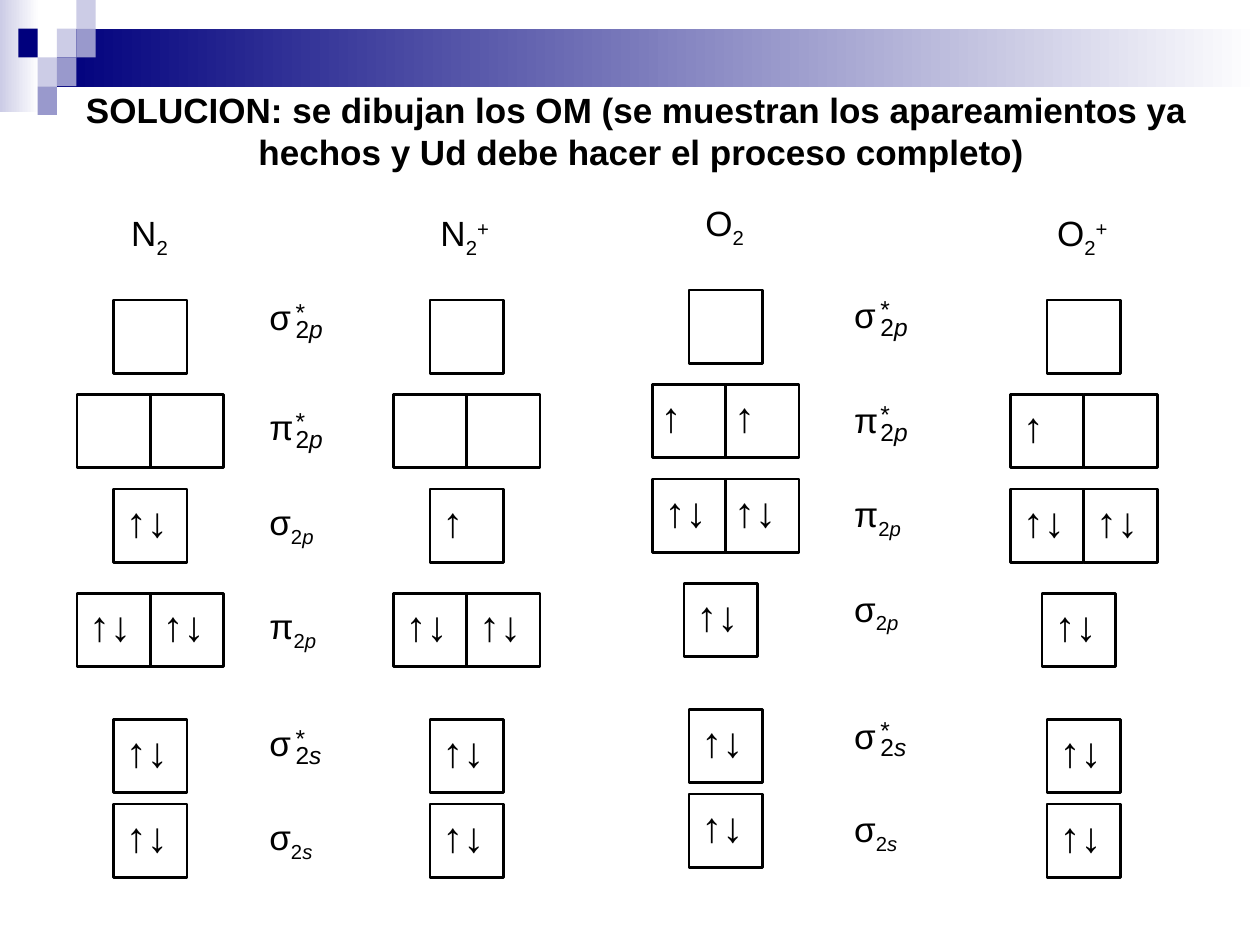
from pptx import Presentation
from pptx.dml.color import RGBColor
from pptx.enum.shapes import MSO_SHAPE
from pptx.enum.text import MSO_ANCHOR, MSO_AUTO_SIZE, PP_ALIGN
from pptx.util import Cm, Pt

RECTANGLE = MSO_SHAPE.RECTANGLE
TOP = MSO_ANCHOR.TOP
CENTER = PP_ALIGN.CENTER
FIXED = MSO_AUTO_SIZE.NONE
FIT_SHAPE = MSO_AUTO_SIZE.SHAPE_TO_FIT_TEXT

COLORS = {
    "ink": "000000",
    "navy": "00007D",
    "violet": "9999CC",
    "lilac": "CCCCE6",
    "white": "FFFFFF",
}
FONT = "Arial"
CELL = 1.48
ROW_TOPS = [1.91, 3.81, 5.72, 7.82, 10.36, 12.07]

SUBSCRIPT = {"baseline": "-25000"}
SUPERSCRIPT = {"baseline": "30000"}
ITALIC = {"i": "1"}
BOLD = {"b": "1"}
PAIR = [("↑", ITALIC), ("↓", BOLD)]
UP_BOLD = [("↑", BOLD)]
UP_ITALIC = [("↑", ITALIC)]
EMPTY = []


def color(name):
    return RGBColor.from_string(COLORS[name])


def style_paragraph(para, size, bold=False):
    para.font.name = FONT
    para.font.size = Pt(size)
    para.font.bold = bold
    para.font.color.rgb = color("ink")


def write_spans(para, spans, size):
    style_paragraph(para, size)
    for text, style in spans:
        span = para.add_run()
        span.text = text
        properties = span._r.get_or_add_rPr()
        for key, value in style.items():
            properties.set(key, value)


def add_text(shapes, left, top, width, height, spans, size):
    box = shapes.add_textbox(Cm(left), Cm(top), Cm(width), Cm(height))
    frame = box.text_frame
    frame.word_wrap = False
    frame.auto_size = FIT_SHAPE
    write_spans(frame.paragraphs[0], spans, size)


def add_block(shapes, left, top, width, height):
    block = shapes.add_shape(RECTANGLE, Cm(left), Cm(top), Cm(width), Cm(height))
    block.shadow.inherit = False
    return block


def add_banner(page, left, top):
    shapes = page.shapes.add_group_shape().shapes
    gradients = [(0, 0, 0.79, 2.26, "lilac"), (1.14, 0.58, 24.26, 1.17, "navy")]
    for x, y, width, height, start in gradients:
        band = add_block(shapes, left + x, top + y, width, height)
        band.line.fill.background()
        band.fill.gradient()
        band.fill.gradient_angle = 0
        for stop, name in zip(band.fill.gradient_stops, (start, "white")):
            stop.color.rgb = color(name)
    step = 0.58
    squares = [
        (3, 1, "lilac"), (4, 0, "lilac"), (4, 1, "violet"), (2, 2, "lilac"),
        (1, 1, "navy"), (3, 2, "violet"), (2, 3, "violet"),
    ]
    for column, row, name in squares:
        square = add_block(shapes, left + 0.39 * column - 0.02, top + step * row, 0.39, step)
        square.line.fill.background()
        square.fill.solid()
        square.fill.fore_color.rgb = color(name)


def add_title(page, left, top, width, height):
    title = page.shapes.title
    title.left, title.top, title.width, title.height = map(Cm, (left, top, width, height))
    frame = title.text_frame
    frame.text = (
        "SOLUCION: se dibujan los OM (se muestran los apareamientos ya \n"
        "hechos y Ud debe hacer el proceso completo)"
    )
    frame.word_wrap = False
    frame.auto_size = FIXED
    frame.vertical_anchor = TOP
    for para in frame.paragraphs:
        para.alignment = CENTER
        style_paragraph(para, 20, bold=True)


def add_orbitals(page, left, top, formula, formula_width, levels, indents, nudges):
    shapes = page.shapes.add_group_shape().shapes
    add_text(shapes, left + CELL - formula_width / 2, top, formula_width, 1.09, formula, 20)
    for row, (row_top, cells) in enumerate(zip(ROW_TOPS, levels)):
        indent = 0 if len(cells) == 2 else indents.get(row, CELL / 2)
        for column, electrons in enumerate(cells):
            cell_left = left + indent + column * CELL
            cell = add_block(shapes, cell_left, top + row_top, CELL, CELL)
            cell.fill.background()
            cell.line.color.rgb = color("ink")
            cell.line.width = Pt(1.5)
            if electrons:
                width = 1.35 if len(electrons) == 2 else 0.94
                text_left = cell_left + nudges.get((row, column), 0)
                add_text(shapes, text_left, top + row_top, width, 1.27, electrons, 24)


def add_stacked_label(shapes, left, top, symbol, subshell):
    add_text(shapes, left, top, 0.94, 1.09, [(symbol, {})], 20)
    box = shapes.add_textbox(Cm(left + 0.53), Cm(top + 0.35), Cm(1.47), Cm(1.35))
    frame = box.text_frame
    frame.word_wrap = False
    frame.margin_top = frame.margin_bottom = 0
    lines = [[("*", {})], [("2", {}), (subshell, ITALIC)]]
    for para, spans in zip((frame.paragraphs[0], frame.add_paragraph()), lines):
        para.line_spacing = 0.6
        write_spans(para, spans, 14)


def add_labels(page, left, top, labels):
    shapes = page.shapes.add_group_shape().shapes
    for offset, symbol, subshell, antibonding in labels:
        if antibonding:
            add_stacked_label(shapes, left, top + offset, symbol, subshell)
        else:
            spans = [(symbol, {}), ("2", SUBSCRIPT), (subshell, SUBSCRIPT | ITALIC)]
            add_text(shapes, left, top + offset, 1.45, 1.09, spans, 20)


def main():
    deck = Presentation()
    deck.slide_width, deck.slide_height = Cm(25.4), Cm(19.05)
    page = deck.slides.add_slide(deck.slide_layouts[5])
    add_banner(page, 0, 0)
    add_title(page, 0.99, 1.65, 23.88, 1.96)

    add_labels(page, 5.18, 5.84, [
        (0, "σ", "p", True), (2.21, "π", "p", True), (4.12, "σ", "p", False),
        (6.23, "π", "p", False), (8.59, "σ", "s", True), (10.47, "σ", "s", False),
    ])
    add_labels(page, 16.97, 5.79, [
        (0, "σ", "p", True), (2.11, "π", "p", True), (4.01, "π", "p", False),
        (5.92, "σ", "p", False), (8.48, "σ", "s", True), (10.36, "σ", "s", False),
    ])

    nitrogen = [("N", {}), ("2", SUBSCRIPT)]
    oxygen = [("O", {}), ("2", SUBSCRIPT)]
    cation = [("+", SUPERSCRIPT)]
    filled = [[PAIR], [PAIR]]
    vacant = [[EMPTY], [EMPTY, EMPTY]]
    oxygen_indents = {3: 0.64}
    oxygen_nudges = {(1, 0): -0.08, (1, 1): -0.08, (2, 1): -0.08}

    add_orbitals(page, 1.55, 4.14, nitrogen, 1.27,
                 vacant + [[PAIR], [PAIR, PAIR]] + filled, {}, {})
    add_orbitals(page, 7.93, 4.14, nitrogen + cation, 1.56,
                 vacant + [[UP_ITALIC], [PAIR, PAIR]] + filled, {}, {})
    add_orbitals(page, 13.15, 3.94, oxygen, 1.32,
                 [[EMPTY], [UP_BOLD, UP_BOLD], [PAIR, PAIR], [PAIR]] + filled,
                 oxygen_indents, oxygen_nudges)
    add_orbitals(page, 20.37, 4.14, oxygen + cation, 1.58,
                 [[EMPTY], [UP_BOLD, EMPTY], [PAIR, PAIR], [PAIR]] + filled,
                 oxygen_indents, {})
    deck.save("out.pptx")


if __name__ == "__main__":
    main()
